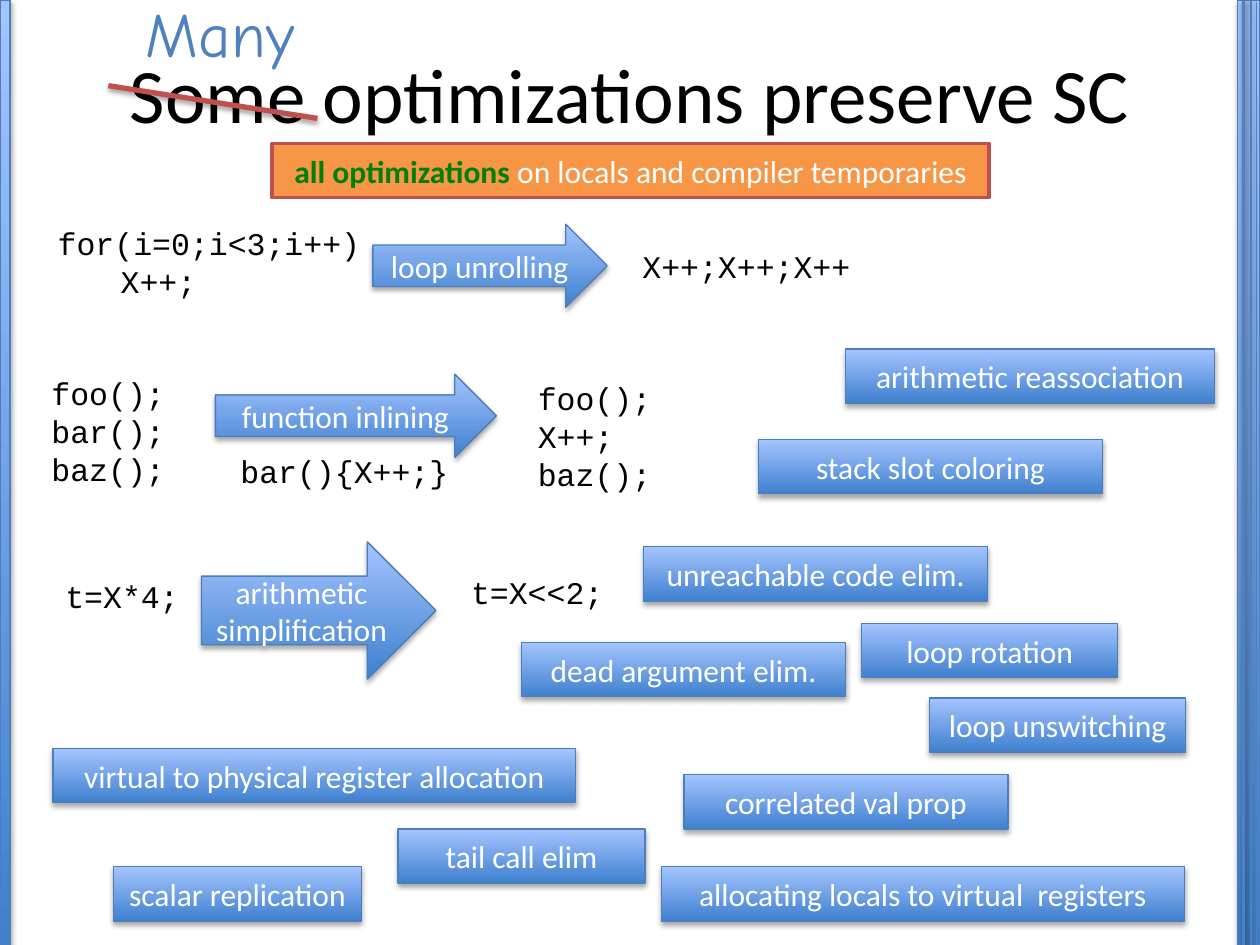
from lxml.etree import SubElement
from pptx import Presentation
from pptx.dml.color import RGBColor
from pptx.enum.shapes import MSO_CONNECTOR, MSO_SHAPE
from pptx.enum.text import MSO_ANCHOR, MSO_AUTO_SIZE, PP_ALIGN
from pptx.oxml.ns import qn
from pptx.util import Inches, Pt

BLACK = RGBColor(0x00, 0x00, 0x00)
WHITE = RGBColor(0xFF, 0xFF, 0xFF)
DEEP_BLUE = RGBColor(0x3F, 0x80, 0xCE)
PALE_BLUE = RGBColor(0xA4, 0xC4, 0xFF)
EDGE_BLUE = RGBColor(0x4B, 0x7E, 0xBC)
ACCENT_BLUE = RGBColor(0x4F, 0x81, 0xBD)
ORANGE = RGBColor(0xF7, 0x96, 0x46)
RED = RGBColor(0xC0, 0x50, 0x4D)
GREEN = RGBColor(0x00, 0x80, 0x00)

SANS, CODE, HAND = "Calibri", "Courier New", "Comic Neue"
BOX_HEIGHT = 0.43

# Content: positions are left, top, width, height in inches
TITLE = "Some optimizations preserve SC"
CORRECTION = "Many"
BANNER = [("all optimizations", GREEN, True),
          (" on locals and compiler temporaries", WHITE, False)]

SIDE_BARS = [(9.82, 0, 0.18, 7.5), (0, 0, 0.08, 7.5)]
SIDE_STRIPES = [(9.87, 0, 1.5), (9.93, 0, 1), (9.97, 0.02, 0.5)]  # x, top, points

CODE_SAMPLES = [
    ("for(i=0;i<3;i++)\n\tX++;", (0.36, 1.73, 2.63, 0.71)),
    ("X++;X++;X++", (5, 1.91, 1.87, 0.4)),
    ("foo();\nbar();\nbaz();", (0.31, 2.92, 1.11, 1.01)),
    ("bar(){X++;}", (1.81, 3.54, 1.87, 0.4)),
    ("foo();\nX++;\nbaz();", (4.17, 2.96, 1.11, 1.01)),
    ("t=X*4;", (0.42, 4.53, 1.11, 0.4)),
    ("t=X<<2;", (3.64, 4.5, 1.26, 0.4)),
]
TRANSFORMATIONS = [
    ("loop unrolling", (2.96, 1.78, 1.86, 0.66)),
    ("function inlining", (1.71, 2.97, 2.23, 0.66)),
    ("arithmetic simplification", (1.6, 4.3, 1.86, 1.09)),
]
OPTIMIZATIONS = [  # label, left, top, width
    ("unreachable code elim.", 5.11, 4.34, 2.73),
    ("dead argument elim.", 4.14, 5.1, 2.57),
    ("scalar replication", 0.9, 6.88, 1.97),
    ("correlated val prop", 5.43, 6.15, 2.57),
    ("tail call elim", 3.16, 6.58, 1.96),
    ("loop rotation", 6.84, 4.95, 2.03),
    ("loop unswitching", 7.38, 5.54, 2.03),
    ("allocating locals to virtual  registers", 5.25, 6.88, 4.15),
    ("virtual to physical register allocation", 0.42, 5.94, 4.15),
    ("stack slot coloring", 6.02, 3.49, 2.73),
    ("arithmetic reassociation", 6.71, 2.77, 2.93),
]

deck = Presentation()
deck.slide_width, deck.slide_height = Inches(10), Inches(7.5)
slide = deck.slides.add_slide(deck.slide_layouts[6])


def style_font(font, face, size, color, bold=False):
    font.name, font.size, font.bold = face, Pt(size), bold
    font.color.rgb = color


def add_shadow(drawn, distance, opacity):
    """Append a downward shadow; call after fill and line are set."""
    effects = SubElement(drawn._element.spPr, qn("a:effectLst"))
    shadow = SubElement(effects, qn("a:outerShdw"), blurRad=str(Pt(3.1)),
                        dist=str(Pt(distance)), dir="5400000", rotWithShape="0")
    color = SubElement(shadow, qn("a:srgbClr"), val=str(BLACK))
    SubElement(color, qn("a:alpha"), val=str(opacity * 1000))


def add_text(text, place, face, size, color, wrap=False, align=PP_ALIGN.LEFT):
    box = slide.shapes.add_textbox(*map(Inches, place))
    frame = box.text_frame
    frame.text = text
    frame.word_wrap = wrap
    for paragraph in frame.paragraphs:
        paragraph.alignment = align
        paragraph._p.get_or_add_pPr().set("defTabSz", str(Inches(0.5)))
        for run in paragraph.runs:
            style_font(run.font, face, size, color)
    return frame


def add_blue_shape(kind, place, label=""):
    shape = slide.shapes.add_shape(kind, *map(Inches, place))
    shape.fill.gradient()
    shape.fill.gradient_angle = 90
    for stop, color in zip(shape.fill.gradient_stops, (DEEP_BLUE, PALE_BLUE)):
        stop.color.rgb = color
    shape.line.color.rgb = EDGE_BLUE
    shape.line.width = Pt(0.75)
    add_shadow(shape, 1.8, 35)
    if label:
        frame = shape.text_frame
        frame.text = label
        frame.vertical_anchor = MSO_ANCHOR.MIDDLE
        frame.paragraphs[0].alignment = PP_ALIGN.CENTER
        style_font(frame.paragraphs[0].runs[0].font, SANS, 18, WHITE)


def add_line(start, end, color, width):
    line = slide.shapes.add_connector(
        MSO_CONNECTOR.STRAIGHT, *map(Inches, (*start, *end)))
    line.line.color.rgb = color
    line.line.width = Pt(width)
    add_shadow(line, 1.6, 38)


# Side decoration
for bar in SIDE_BARS:
    add_blue_shape(MSO_SHAPE.RECTANGLE, bar)
for x, top, width in SIDE_STRIPES:
    add_line((x, top), (x, top + 7.5), ACCENT_BLUE, width)

# Title
title = add_text(TITLE, (0.5, 0.3, 9, 0.87), SANS, 44, BLACK,
                 wrap=True, align=PP_ALIGN.CENTER)
title.vertical_anchor = MSO_ANCHOR.MIDDLE

# Code before and after each transformation
for code, place in CODE_SAMPLES:
    add_text(code, place, CODE, 18, BLACK).auto_size = MSO_AUTO_SIZE.SHAPE_TO_FIT_TEXT
for label, place in TRANSFORMATIONS:
    add_blue_shape(MSO_SHAPE.RIGHT_ARROW, place, label)

# Scattered optimization boxes
for label, left, top, width in OPTIMIZATIONS:
    add_blue_shape(MSO_SHAPE.RECTANGLE, (left, top, width, BOX_HEIGHT), label)

# Orange banner
banner = slide.shapes.add_shape(
    MSO_SHAPE.RECTANGLE, *map(Inches, (2.16, 1.14, 5.69, BOX_HEIGHT)))
banner.shadow.inherit = False
banner.fill.solid()
banner.fill.fore_color.rgb = ORANGE
banner.line.color.rgb = RED
banner.line.width = Pt(2)
banner.text_frame.vertical_anchor = MSO_ANCHOR.MIDDLE
banner_line = banner.text_frame.paragraphs[0]
banner_line.alignment = PP_ALIGN.CENTER
for words, color, bold in BANNER:
    run = banner_line.add_run()
    run.text = words
    style_font(run.font, SANS, 18, color, bold)

# "Some" struck out and replaced by "Many"
add_line((0.86, 0.68), (2.52, 0.94), RED, 3)
add_text(CORRECTION, (1.06, -0.09, 1.66, 0.71), HAND, 36, ACCENT_BLUE, wrap=True)

deck.save("out.pptx")
